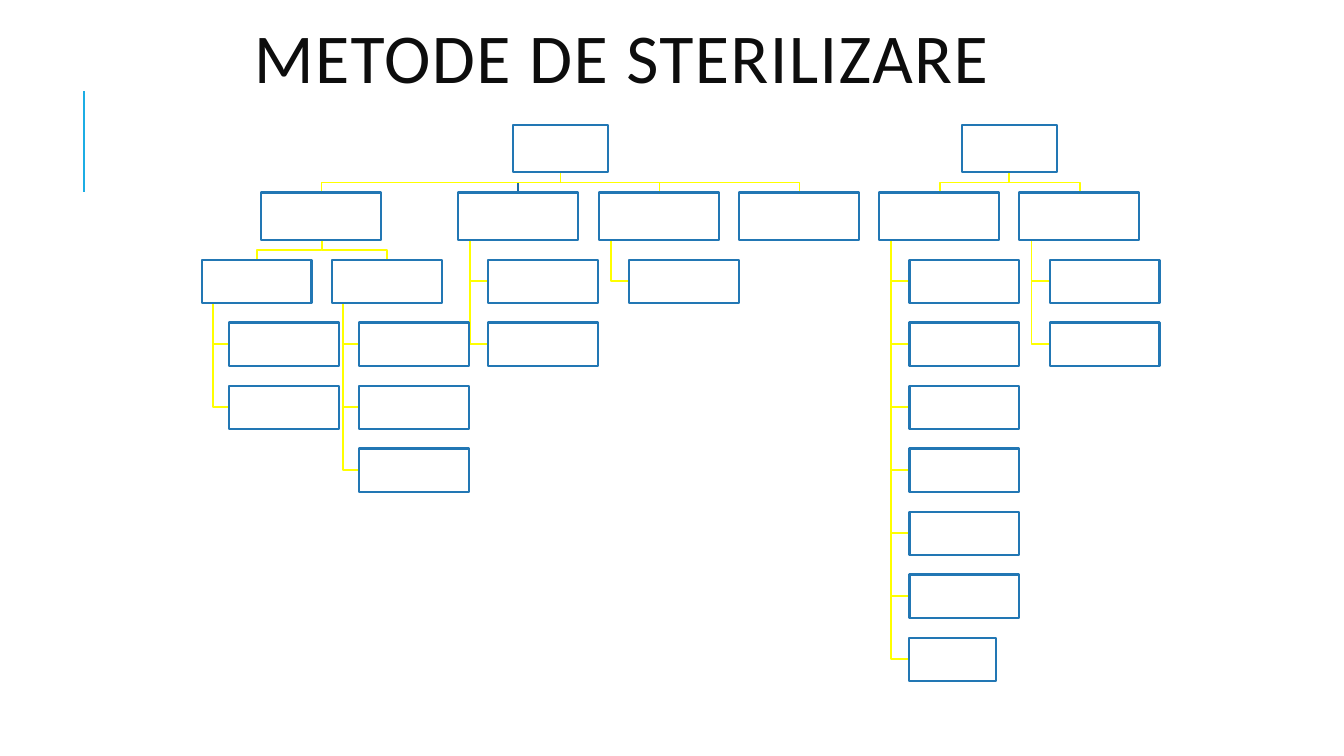
from lxml.etree import SubElement
from pptx import Presentation
from pptx.dml.color import RGBColor
from pptx.enum.shapes import MSO_CONNECTOR as Connector, MSO_SHAPE as Shape
from pptx.enum.text import MSO_ANCHOR as Anchor, PP_ALIGN as Align
from pptx.oxml.ns import qn
from pptx.util import Pt

PX = 9144
ROOT_Y, BRANCH_Y, LEAF_Y = 124, 191, 258
ROOT_W, BRANCH_W, LEAF_W, SHORT_W = 94, 119, 109, 86
NODE_H, LEAF_H = 47, 43
LAST_ROW = 6
BRANCHES = {509: {259: 0, 454: 2, 594: 1, 733: 0}, 954: {872: 7, 1011: 2}}
GROUPS = {259: {200: 2, 329: 3}}

rgb = RGBColor.from_string
boxes, links = [], []


def hang(parent_x, parent_w, x, y, w, h, color="FFFF00"):
    start, end = parent_x + (parent_w + 1) // 2, x + (w + 1) // 2
    boxes.append((x, y, w, h))
    links.append(([(start, y - 20), (start, y - 10), (end, y - 10), (end, y)], color))


def stack(trunk, bottom, x, first_row, count):
    for row in range(first_row, first_row + count):
        y = LEAF_Y + 125 * row // 2
        middle = y + LEAF_H // 2
        boxes.append((x, y, SHORT_W if row == LAST_ROW else LEAF_W, LEAF_H))
        links.append(([(trunk, bottom), (trunk, middle), (x, middle)], "FFFF00"))


for root_x, branches in BRANCHES.items():
    boxes.append((root_x, ROOT_Y, ROOT_W, NODE_H))
    for branch_x, leaves in branches.items():
        color = "1E699F" if branch_x == 454 else "FFFF00"
        hang(root_x, ROOT_W, branch_x, BRANCH_Y, BRANCH_W, NODE_H, color)
        for group_x, members in GROUPS.get(branch_x, {}).items():
            hang(branch_x, BRANCH_W, group_x, LEAF_Y, LEAF_W, LEAF_H)
            stack(group_x + 11, LEAF_Y + LEAF_H, group_x + 27, 1, members)
        stack(branch_x + 12, BRANCH_Y + NODE_H, branch_x + 30, 0, leaves)

deck = Presentation()
deck.slide_width, deck.slide_height = 1333 * PX, 750 * PX
slide = deck.slides.add_slide(deck.slide_layouts[6])
shapes = slide.shapes

accent = shapes.add_connector(Connector.STRAIGHT, 83 * PX, 190 * PX, 83 * PX, 90 * PX)
accent.line.color.rgb = rgb("1CADE4")
accent.line.width = Pt(1.5)
SubElement(accent._element.spPr, qn("a:effectLst"))

heading = shapes.add_textbox(242 * PX, 0, 850 * PX, 125 * PX).text_frame
heading_line = heading.paragraphs[0]
heading_run = heading_line.add_run()
heading_format = [
    (heading, {"word_wrap": True, "vertical_anchor": Anchor.MIDDLE}),
    (heading_line, {"alignment": Align.LEFT, "line_spacing": 0.8}),
    (heading_run, {"text": "METODE DE STERILIZARE"}),
    (heading_run.font, {"name": "Calibri", "size": Pt(50)}),
    (heading_run.font.color, {"rgb": rgb("0D0D0D")}),
]
for target, values in heading_format:
    for key, value in values.items():
        setattr(target, key, value)
heading_run.font._element.set("spc", "100")

for points, color in reversed(links):
    outline = shapes.build_freeform(*points[0], scale=PX)
    outline.add_line_segments(points[1:], close=False)
    link = outline.convert_to_shape()
    link.shadow.inherit = False
    link.fill.background()
    link.line.color.rgb = rgb(color)
    link.line.width = Pt(1.25)

for place in boxes:
    box = shapes.add_shape(Shape.RECTANGLE, *(length * PX for length in place))
    box.shadow.inherit = False
    box.fill.solid()
    box.fill.fore_color.rgb = rgb("FFFFFF")
    box.line.color.rgb = rgb("2277B4")
    box.line.width = Pt(1.5)

deck.save("out.pptx")
